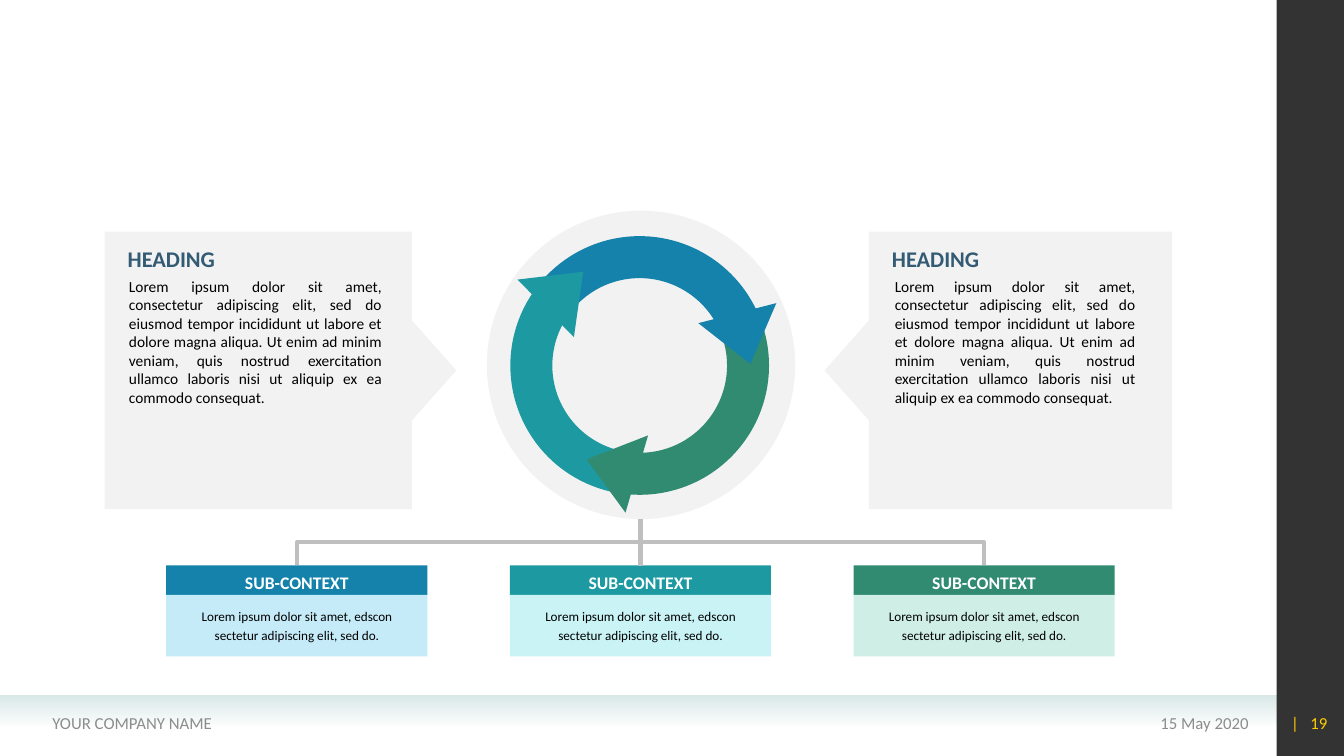
from lxml.etree import SubElement
from pptx import Presentation
from pptx.dml.color import RGBColor
from pptx.enum.shapes import MSO_CONNECTOR, MSO_SHAPE
from pptx.enum.text import MSO_ANCHOR, MSO_AUTO_SIZE, PP_ALIGN
from pptx.oxml.ns import qn
from pptx.util import Cm, Pt

COLORS = {
    "blue": "1482AB", "teal": "1D9AA1", "green": "318B71",
    "pale blue": "C6EBF8", "pale teal": "C9F3F5", "pale green": "CFEEE5",
    "panel": "F2F2F2", "connector": "BFBFBF", "heading": "335B74",
    "footer": "D9E9E8", "footer text": "8C8C8C", "number": "FFCC00",
    "black": "000000", "white": "FFFFFF",
}
LOREM = ("Lorem ipsum dolor sit amet, consectetur adipiscing elit, sed do eiusmod "
         "tempor incididunt ut labore et dolore magna aliqua. Ut enim ad minim "
         "veniam, quis nostrud exercitation ullamco laboris nisi ut aliquip ex ea "
         "commodo consequat.")
SHORT_LOREM = "Lorem ipsum dolor sit amet, edscon sectetur adipiscing elit, sed do."


def rgb(name):
    return RGBColor.from_string(COLORS[name])


def set_alpha(color_element, percent):
    SubElement(color_element, qn("a:alpha")).set("val", str(percent * 1000))


class SlideBuilder:
    """Holds the font and the current slide; all lengths are centimetres."""

    font = "Calibri"

    def __init__(self, slide):
        self.slide = slide

    def shape(self, kind, left, top, width, height, color=None, rotation=0,
              adjustments=()):
        shape = self.slide.shapes.add_shape(
            kind, Cm(left), Cm(top), Cm(width), Cm(height))
        shape.shadow.inherit = False
        shape.line.fill.background()
        shape.rotation = rotation
        for index, value in enumerate(adjustments):
            shape.adjustments[index] = value
        if color:
            shape.fill.solid()
            shape.fill.fore_color.rgb = rgb(color)
        else:
            shape.fill.background()
        return shape

    def arc(self, left, top, size, color, rotation, adjustments):
        arc = self.shape(MSO_SHAPE.ARC, left, top, size, size,
                         rotation=rotation, adjustments=adjustments)
        arc.line.color.rgb = rgb(color)
        arc.line.width = Pt(30)

    def fading_band(self, left, top, width, height, color):
        """Draw a band that fades to transparent at its lower edge."""
        band = self.shape(MSO_SHAPE.RECTANGLE, left, top, width, height)
        band.fill.gradient()
        band.fill.gradient_angle = 270
        for stop in band.fill.gradient_stops:
            stop.color.rgb = rgb(color)
        set_alpha(list(band._element.spPr.iter(qn("a:srgbClr")))[-1], 0)

    def text(self, content, left, top, width, height, size, color, bold=False,
             align=PP_ALIGN.LEFT, anchor=MSO_ANCHOR.TOP, compact=False,
             grow=True, line_spacing=None):
        """Add a text box; content is a string or a list of run strings."""
        box = self.slide.shapes.add_textbox(
            Cm(left), Cm(top), Cm(width), Cm(height))
        frame = box.text_frame
        frame.word_wrap = True
        frame.vertical_anchor = anchor
        if grow:
            frame.auto_size = MSO_AUTO_SIZE.SHAPE_TO_FIT_TEXT
        if compact:
            frame.margin_left = frame.margin_right = Cm(0.1)
            frame.margin_top = frame.margin_bottom = Cm(0.05)
        paragraph = frame.paragraphs[0]
        paragraph.alignment = align
        if line_spacing:
            paragraph.line_spacing = Pt(line_spacing)
        for part in [content] if isinstance(content, str) else content:
            paragraph.add_run().text = part
        for run in paragraph.runs:
            run.font.name = self.font
            run.font.size = Pt(size)
            run.font.bold = bold
            run.font.color.rgb = rgb(color)
        return paragraph

    def connector(self, kind, begin_x, begin_y, end_x, end_y):
        connector = self.slide.shapes.add_connector(
            kind, Cm(begin_x), Cm(begin_y), Cm(end_x), Cm(end_y))
        connector.line.color.rgb = rgb("connector")
        connector.line.width = Pt(3)
        SubElement(connector._element.spPr, qn("a:effectLst"))
        return connector

    def branch(self, hub_x, top, bottom, span, side):
        """Bend from the hub down, sideways (side is -1 or 1) and down again."""
        centre_x, centre_y = hub_x + side * span / 2, (top + bottom) / 2
        half_drop = (bottom - top) / 2
        elbow = self.connector(
            MSO_CONNECTOR.ELBOW,
            centre_x + side * half_drop, centre_y - span / 2,
            centre_x - side * half_drop, centre_y + span / 2)
        quarter_turns = 3 if side > 0 else 1
        elbow._element.spPr.find(qn("a:xfrm")).set(
            "rot", str(quarter_turns * 5400000))


def add_frame(builder):
    """Add the footer and the dark side bar."""
    builder.fading_band(0, 17.53, 32.17, 0.79, "footer")
    sidebar = builder.shape(MSO_SHAPE.RECTANGLE, 32.17, 0, 1.7, 19.05, "black")
    set_alpha(next(sidebar._element.spPr.iter(qn("a:srgbClr"))), 80)
    for content, left, width, color, align in (
            ("15 May 2020", 23.11, 8.61, "footer text", PP_ALIGN.RIGHT),
            ("YOUR COMPANY NAME", 1.07, 12.45, "footer text", PP_ALIGN.LEFT),
            (("|", " ", "19"), 32, 1.7, "number", PP_ALIGN.RIGHT)):
        label = builder.text(content, left, 17.7, width, 1.02, 12, color,
                             align=align, anchor=MSO_ANCHOR.MIDDLE, grow=False)
    gap = label.runs[1]
    gap.font._element.set("spc", "540")


def add_cycle(builder):
    builder.shape(MSO_SHAPE.OVAL, 12.27, 5.31, 7.77, 7.77, "panel")
    for color, rotation, angles in (
            ("green", 120, (130.37, 203.42)),
            ("blue", 0, (131.25, 203.19)),
            ("teal", 240, (130.1, 204.38))):
        builder.arc(13.39, 6.48, 5.46, color, rotation, angles)
    for color, left, top, rotation in (
            ("blue", 17.73, 7.87, 165.6),
            ("teal", 13.21, 6.65, 45.6),
            ("green", 14.4, 11.1, 286.3)):
        builder.shape(MSO_SHAPE.ISOSCELES_TRIANGLE, left, top, 2.03, 1.32,
                      color, rotation)


def add_callouts(builder):
    for kind, left, width, heading_left, body_left, body_width in (
            (MSO_SHAPE.LEFT_ARROW_CALLOUT, 20.78, 8.76, 22.23, 22.45, 6.27),
            (MSO_SHAPE.RIGHT_ARROW_CALLOUT, 2.64, 8.86, 2.97, 3.15, 6.58)):
        builder.shape(kind, left, 5.84, width, 6.99, "panel",
                      adjustments=(0.25, 0.18, 0.16, 0.88))
        builder.text(LOREM, body_left, 6.93, body_width, 3.4, 11, "black",
                     align=PP_ALIGN.JUSTIFY, compact=True)
        builder.text("HEADING", heading_left, 6.05, 5.2, 0.94, 16, "heading",
                     bold=True)


def add_sub_contexts(builder):
    first_left, pitch, width, top = 4.19, 8.66, 6.58, 14.25
    centred = {"align": PP_ALIGN.CENTER, "anchor": MSO_ANCHOR.MIDDLE}
    for index, color in enumerate(("blue", "teal", "green")):
        left = first_left + index * pitch
        builder.shape(MSO_SHAPE.RECTANGLE, left, top, width, 0.74, color)
        builder.shape(MSO_SHAPE.RECTANGLE, left, top + 0.74, width, 1.55,
                      f"pale {color}")
        builder.text("SUB-CONTEXT", left, top + 0.02, width, 0.79, 12.6,
                     "white", bold=True, **centred)
        builder.text(SHORT_LOREM, left + 0.25, top + 0.96, width - 0.5, 1.04,
                     9.4, "black", compact=True, line_spacing=13.8, **centred)
    hub_x, hub_bottom = first_left + pitch + width / 2, 13.08
    builder.connector(MSO_CONNECTOR.STRAIGHT, hub_x, hub_bottom, hub_x, top)
    for side in (1, -1):
        builder.branch(hub_x, hub_bottom, top, pitch, side)


def main():
    presentation = Presentation()
    presentation.slide_width, presentation.slide_height = Cm(33.87), Cm(19.05)
    builder = SlideBuilder(
        presentation.slides.add_slide(presentation.slide_layouts[6]))
    add_frame(builder)
    add_cycle(builder)
    add_callouts(builder)
    add_sub_contexts(builder)
    presentation.save("out.pptx")


if __name__ == "__main__":
    main()
